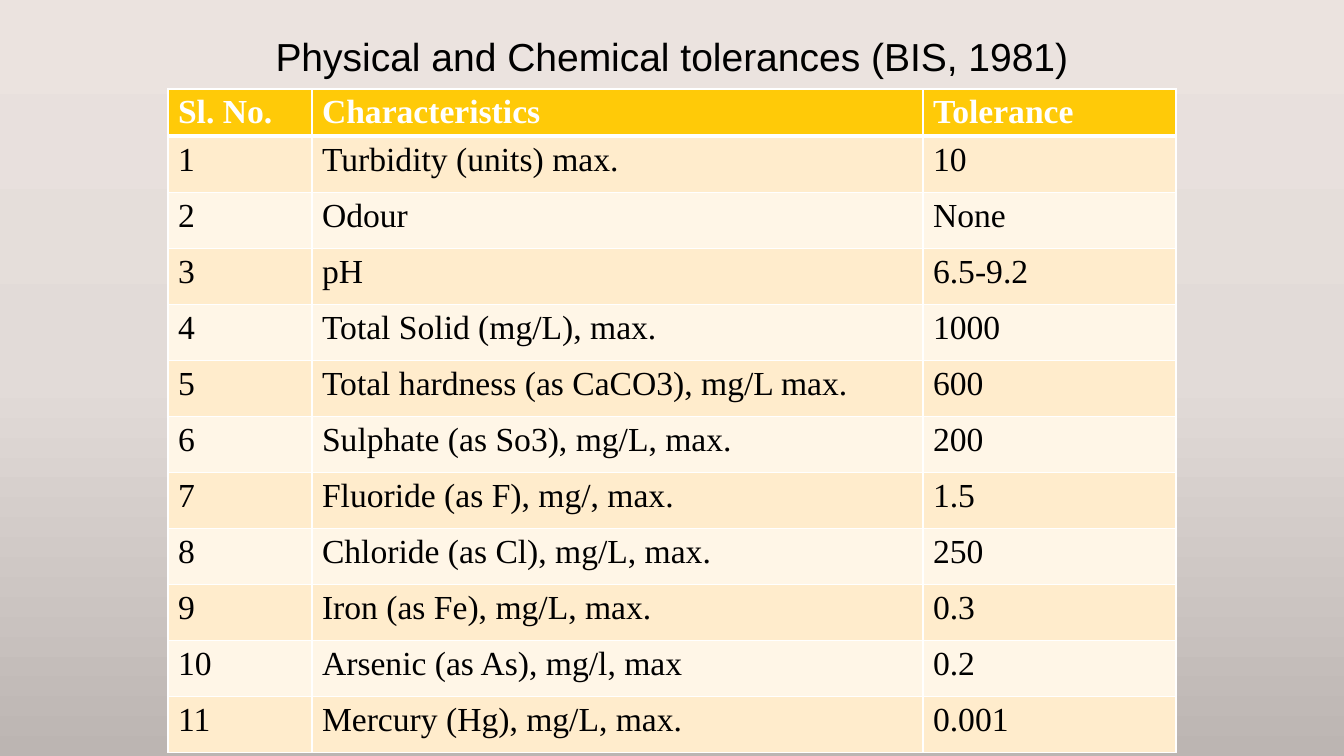
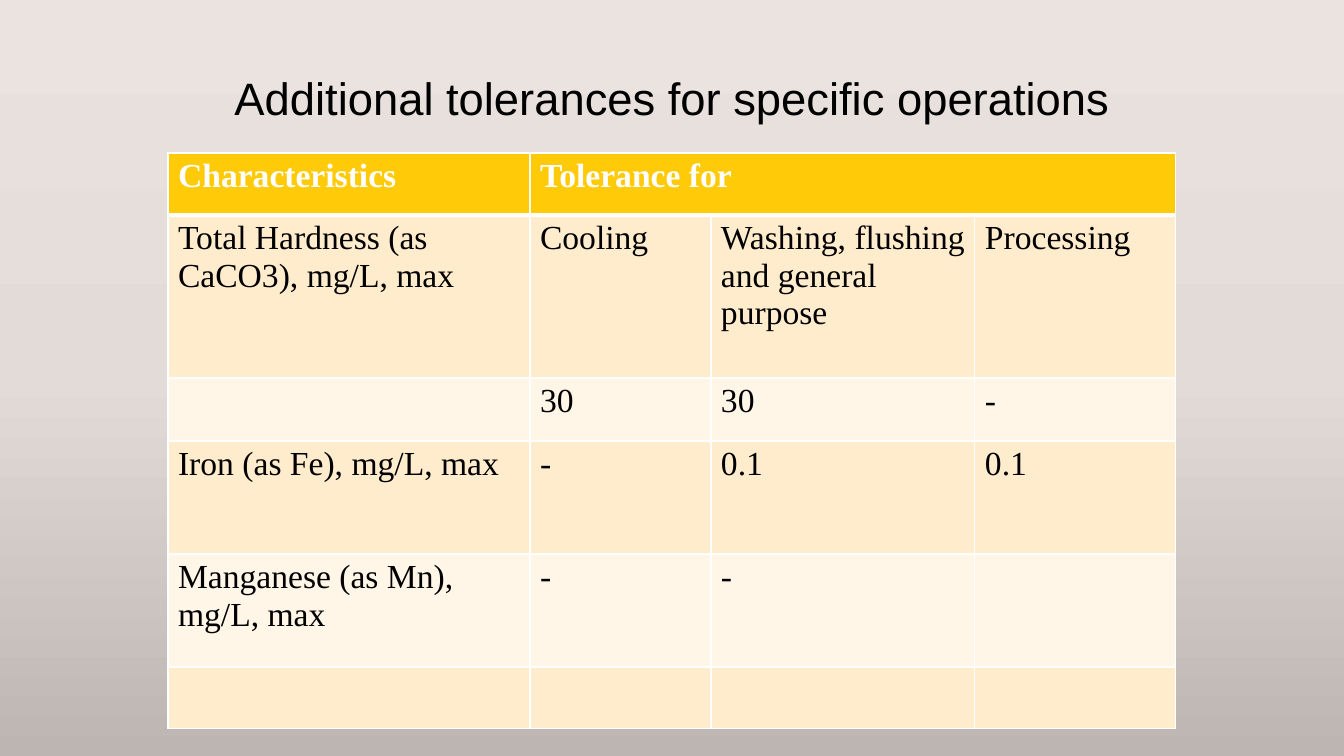
from copy import deepcopy
from dataclasses import dataclass

from lxml.etree import SubElement
from pptx import Presentation
from pptx.dml.color import RGBColor
from pptx.enum.text import MSO_ANCHOR, PP_ALIGN
from pptx.oxml.ns import qn
from pptx.util import Pt

EMU_PER_PX = 12192000 / 1344
PAGE_WIDTH, PAGE_HEIGHT = 1344, 756
TABLE_LEFT, TABLE_WIDTH = 168, 1008
TITLE_ONLY = 5


@dataclass(frozen=True)
class Theme:
    background: tuple = ("EBE3DF", "E2DBD8", "BCB5B2")
    header: str = "FFCA08"
    bands: tuple = ("FFECCC", "FFF6E7")
    dark: str = "000000"
    light: str = "FFFFFF"
    title_font: str = "Arial"
    table_font: str = "Times New Roman"
    table_size: float = 24
    rule: float = 1
    header_rule: float = 3


THEME = Theme()

TOLERANCES = [
    ("Sl. No.", "Characteristics", "Tolerance"),
    ("1", "Turbidity (units) max.", "10"),
    ("2", "Odour", "None"),
    ("3", "pH", "6.5-9.2"),
    ("4", "Total Solid (mg/L), max.", "1000"),
    ("5", "Total hardness (as CaCO3), mg/L max.", "600"),
    ("6", "Sulphate (as So3), mg/L, max.", "200"),
    ("7", "Fluoride (as F), mg/, max.", "1.5"),
    ("8", "Chloride (as Cl), mg/L, max.", "250"),
    ("9", "Iron (as Fe), mg/L, max.", "0.3"),
    ("10", "Arsenic (as As), mg/l, max", "0.2"),
    ("11", "Mercury (Hg), mg/L, max.", "0.001"),
]

OPERATIONS = [
    ("Characteristics", "Tolerance for", "", ""),
    ("Total Hardness (as CaCO3), mg/L, max", "Cooling",
     "Washing, flushing and general purpose", "Processing"),
    ("", "30", "30", "-"),
    ("Iron (as Fe), mg/L, max", "-", "0.1", "0.1"),
    ("Manganese (as Mn), mg/L, max", "-", "-", ""),
    ("", "", "", ""),
]


def px(length):
    return round(length * EMU_PER_PX)


def rgb(value):
    return RGBColor.from_string(value)


def add_span(para, text, font, size, color, bold=False):
    span = para.add_run()
    span.text = text
    span.font.name = font
    span.font.size = Pt(size)
    span.font.color.rgb = rgb(color)
    span.font.bold = bold


def paint_background(master):
    """Give every slide the three-stop gradient, from top to bottom."""
    fill = master.background.fill
    fill.gradient()
    fill.gradient_angle = 270
    stop_list = master.element.find(".//" + qn("a:gsLst"))
    stop_list.insert(1, deepcopy(stop_list[0]))
    for index, (stop, color) in enumerate(zip(fill.gradient_stops, THEME.background)):
        stop.position = index / 2
        stop.color.rgb = rgb(color)


def add_titled_page(deck, title, size, bottom):
    """Add a slide whose title rests just above the given bottom edge."""
    page = deck.slides.add_slide(deck.slide_layouts[TITLE_ONLY])
    box = page.shapes.title
    box.left, box.top = px(TABLE_LEFT), 0
    box.width, box.height = px(TABLE_WIDTH), px(bottom)
    box.text_frame.word_wrap = True
    box.text_frame.vertical_anchor = MSO_ANCHOR.BOTTOM
    para = box.text_frame.paragraphs[0]
    para.alignment = PP_ALIGN.CENTER
    para.line_spacing = 0.9
    add_span(para, title, THEME.title_font, size, THEME.dark)
    return page


def set_borders(cell, top, bottom):
    properties = cell._tc.get_or_add_tcPr()
    widths = {"L": THEME.rule, "R": THEME.rule, "T": top, "B": bottom}
    for index, (side, width) in enumerate(widths.items()):
        line = SubElement(properties, qn(f"a:ln{side}"), w=str(Pt(width)))
        color_fill = SubElement(line, qn("a:solidFill"))
        SubElement(color_fill, qn("a:srgbClr"), val=THEME.light)
        properties.insert(index, line)


def format_cell(cell, text, row):
    is_header = row == 0
    cell.fill.solid()
    fill = THEME.header if is_header else THEME.bands[(row - 1) % 2]
    cell.fill.fore_color.rgb = rgb(fill)
    set_borders(
        cell,
        top=THEME.header_rule if row == 1 else THEME.rule,
        bottom=THEME.header_rule if is_header else THEME.rule,
    )
    if text:
        color = THEME.light if is_header else THEME.dark
        add_span(cell.text_frame.paragraphs[0], text, THEME.table_font,
                 THEME.table_size, color, bold=is_header)


def add_banded_table(page, top, widths, heights, rows):
    frame = page.shapes.add_table(len(rows), len(widths), px(TABLE_LEFT), px(top),
                                  px(sum(widths)), px(sum(heights)))
    table = frame.table
    table.horz_banding = False
    for column, width in zip(table.columns, widths):
        column.width = px(width)
    for row, (height, texts) in enumerate(zip(heights, rows)):
        table.rows[row].height = px(height)
        for column, text in enumerate(texts):
            format_cell(table.cell(row, column), text, row)
    return table


def main():
    deck = Presentation()
    deck.slide_width, deck.slide_height = px(PAGE_WIDTH), px(PAGE_HEIGHT)
    paint_background(deck.slide_master)

    page = add_titled_page(deck, "Physical and Chemical tolerances (BIS, 1981)", 27.9, 85)
    add_banded_table(page, 89, (144, 611, 253), [47] + [56] * 11, TOLERANCES)

    page = add_titled_page(deck, "Additional tolerances for specific operations", 32.4, 130)
    table = add_banded_table(page, 153, (362, 181, 264, 201),
                             (62, 163, 63, 113, 113, 62), OPERATIONS)
    table.cell(0, 1).merge(table.cell(0, 3))

    deck.save("out.pptx")


if __name__ == "__main__":
    main()
